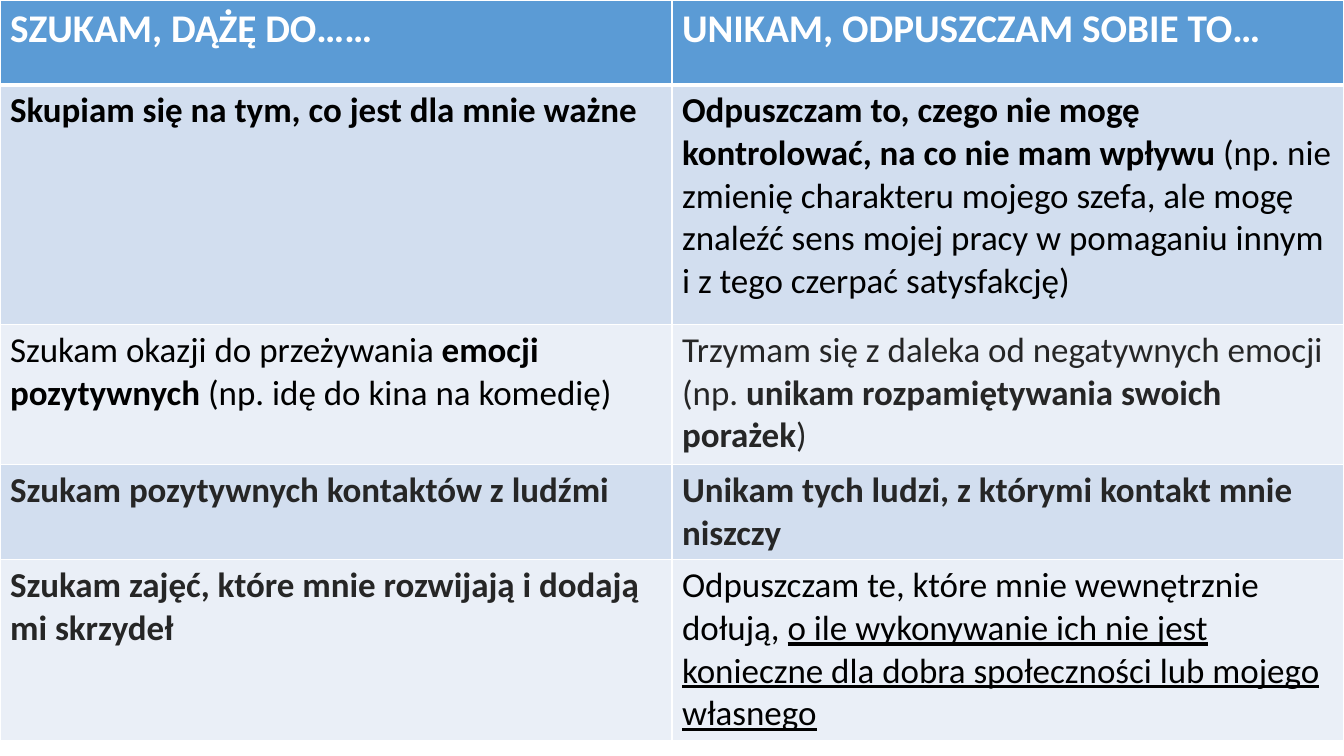
"""Build a slide with a two-column table of things to seek and things to let go."""
from dataclasses import dataclass
from itertools import product

from lxml.etree import SubElement
from pptx import Presentation
from pptx.dml.color import RGBColor as Rgb
from pptx.oxml.ns import qn
from pptx.table import _Cell as Cell
from pptx.util import Inches, Pt

WIDTH, HEIGHT = 13.33, 7.5
FONT = "Calibri"
HEADER_SIZE, BODY_SIZE = 28, 25
THIN, THICK = 1, 3
COLORS = {
    "white": "FFFFFF",
    "black": "000000",
    "charcoal": "262626",
    "header": "5B9BD5",
    "odd": "D2DEEF",
    "even": "EAEFF7",
}


@dataclass(frozen=True)
class Piece:
    text: str
    bold: bool = False
    underline: bool = False


@dataclass(frozen=True)
class Entry:
    color: str
    pieces: tuple[Piece, ...]


@dataclass(frozen=True)
class Row:
    share: float
    seek: Entry
    avoid: Entry


def entry(color: str, *pieces: Piece) -> Entry:
    return Entry(color, pieces)


def strong(text: str) -> Piece:
    return Piece(text, bold=True)


ROWS = (
    Row(0.112,
        entry("white", strong("SZUKAM, DĄŻĘ DO……")),
        entry("white", strong("UNIKAM, ODPUSZCZAM SOBIE TO…"))),
    Row(0.317,
        entry("black", strong("Skupiam się na tym, co jest dla mnie ważne")),
        entry("black",
              strong("Odpuszczam to, czego nie mogę kontrolować, na co nie mam wpływu "),
              Piece("(np. nie zmienię charakteru mojego szefa, ale mogę znaleźć sens "
                    "mojej pracy w pomaganiu innym i z tego czerpać satysfakcję)"))),
    Row(0.185,
        entry("black",
              Piece("Szukam okazji do przeżywania "),
              strong("emocji pozytywnych "),
              Piece("(np. idę do kina na komedię)")),
        entry("charcoal",
              Piece("Trzymam się z daleka od negatywnych emocji (np. "),
              strong("unikam rozpamiętywania swoich porażek"),
              Piece(")"))),
    Row(0.12,
        entry("charcoal", strong("Szukam pozytywnych kontaktów z ludźmi")),
        entry("charcoal", strong("Unikam tych ludzi, z którymi kontakt mnie niszczy"))),
    Row(0.236,
        entry("charcoal",
              strong("Szukam zajęć, które mnie rozwijają i dodają mi skrzydeł")),
        entry("black",
              Piece("Odpuszczam te, które mnie wewnętrznie dołują, "),
              Piece("o ile wykonywanie ich nie jest konieczne dla dobra "
                    "społeczności lub mojego własnego", underline=True))),
)


def draw_borders(cell: Cell, row_index: int) -> None:
    properties = cell._tc.get_or_add_tcPr()
    widths = {
        "a:lnL": THIN,
        "a:lnR": THIN,
        "a:lnT": THICK if row_index == 1 else THIN,
        "a:lnB": THICK if row_index == 0 else THIN,
    }
    for tag, width in widths.items():
        line = SubElement(properties, qn(tag), w=str(Pt(width)))
        fill = SubElement(line, qn("a:solidFill"))
        SubElement(fill, qn("a:srgbClr"), val=COLORS["white"])


def fill_cell(cell: Cell, content: Entry, row_index: int) -> None:
    draw_borders(cell, row_index)
    shade = "header" if row_index == 0 else ("even", "odd")[row_index % 2]
    cell.fill.solid()
    cell.fill.fore_color.rgb = Rgb.from_string(COLORS[shade])
    para = cell.text_frame.paragraphs[0]
    for piece in content.pieces:
        run = para.add_run()
        run.text = piece.text
        run.font.name = FONT
        run.font.size = Pt(BODY_SIZE if row_index else HEADER_SIZE)
        run.font.bold = piece.bold
        run.font.underline = piece.underline
        run.font.color.rgb = Rgb.from_string(COLORS[content.color])


def main() -> None:
    deck = Presentation()
    deck.slide_width, deck.slide_height = Inches(WIDTH), Inches(HEIGHT)
    page = deck.slides.add_slide(deck.slide_layouts[6])
    table_height = int(deck.slide_height * sum(row.share for row in ROWS))
    table = page.shapes.add_table(
        len(ROWS), 2, 0, 0, deck.slide_width, table_height).table
    for line, row in zip(table.rows, ROWS):
        line.height = int(deck.slide_height * row.share)
    for row_index, column in product(range(len(ROWS)), range(2)):
        row = ROWS[row_index]
        content = (row.seek, row.avoid)[column]
        fill_cell(table.cell(row_index, column), content, row_index)
    deck.save("out.pptx")


if __name__ == "__main__":
    main()
